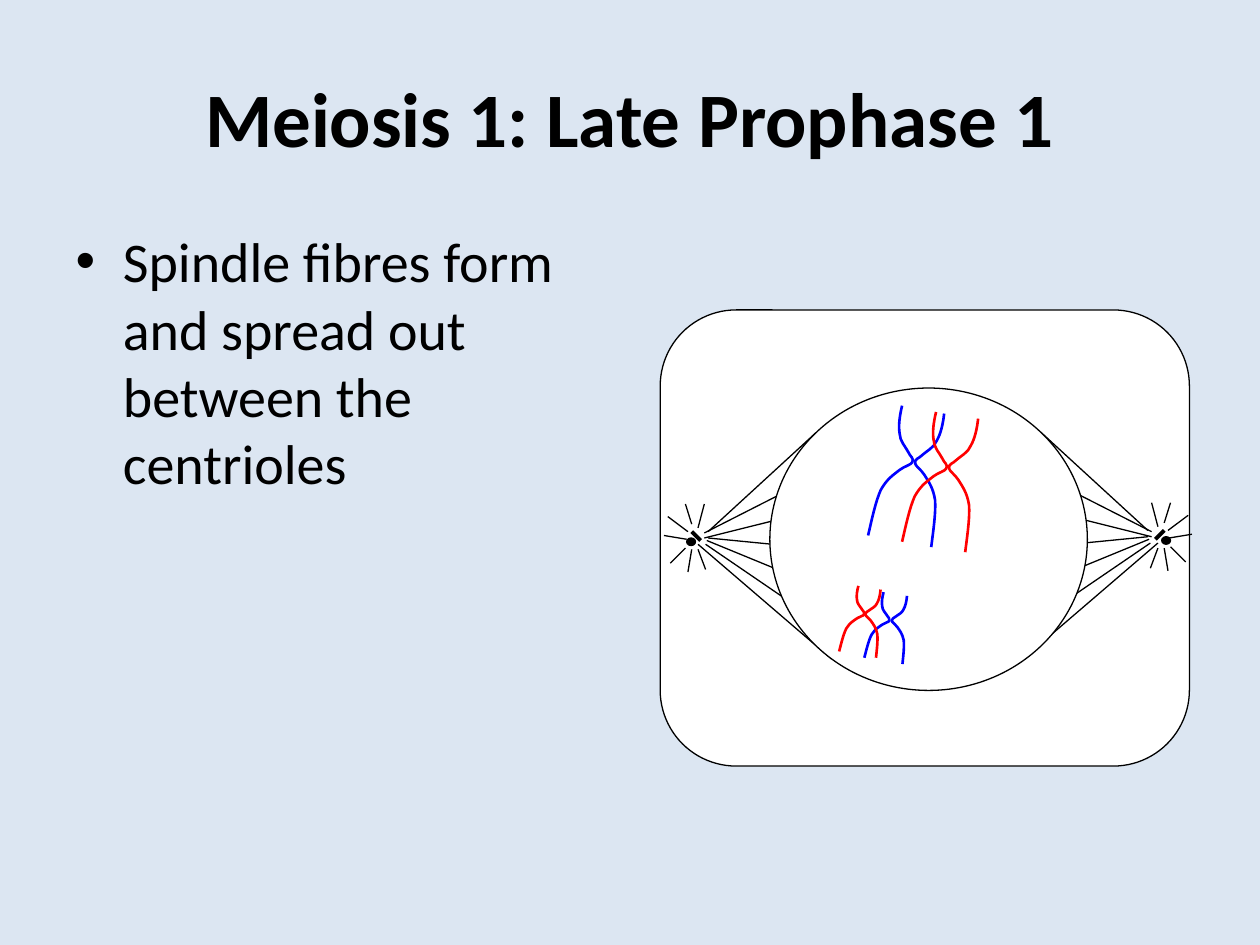
from typing import NamedTuple

from lxml.etree import SubElement
from pptx import Presentation
from pptx.dml.color import RGBColor
from pptx.enum.shapes import MSO_CONNECTOR as Connector, MSO_SHAPE as Preset
from pptx.enum.text import PP_ALIGN as Align
from pptx.oxml.ns import qn
from pptx.util import Inches, Pt

COLORS = {"background": "DCE6F2", "ink": "000000", "cell": "FFFFFF",
          "blue": "0000FF", "red": "FF0000"}
FONT = "Calibri"


class Ray(NamedTuple):
    x1: float
    y1: float
    x2: float
    y2: float
    weight: float = 0.75


class Chromosome(NamedTuple):
    """Two crossing chromatids of one size and colour."""
    left: float
    top: float
    right_left: float
    right_top: float
    width: float
    height: float
    color: str


# Spindle fibres, astral rays and the rod of the left centriole.
LEFT_POLE = [
    Ray(5.62, 4.22, 6.47, 3.44), Ray(5.59, 4.23, 6.18, 3.93),
    Ray(5.59, 4.27, 6.15, 4.13), Ray(5.62, 4.27, 6.13, 4.32),
    Ray(5.61, 4.29, 6.17, 4.52), Ray(5.6, 4.32, 6.23, 4.75),
    Ray(5.54, 4.32, 6.6, 5.23),
    Ray(5.49, 4.16, 5.44, 4), Ray(5.46, 4.22, 5.3, 4.1),
    Ray(5.45, 4.28, 5.27, 4.25), Ray(5.32, 4.47, 5.44, 4.35),
    Ray(5.49, 4.36, 5.46, 4.54), Ray(5.54, 4.19, 5.59, 4),
    Ray(5.54, 4.36, 5.6, 4.52),
    Ray(5.49, 4.22, 5.56, 4.29, 2.25),
]
POLE_SPAN = 14.73  # sum of the x values of two mirrored points
POLE_RISE = 0.01

CHROMOSOMES = [
    Chromosome(6.86, 4.7, 7.05, 4.73, 0.21, 0.52, "blue"),
    Chromosome(6.66, 4.65, 6.84, 4.68, 0.21, 0.52, "red"),
    Chromosome(6.89, 3.22, 7.21, 3.28, 0.37, 1.03, "blue"),
    Chromosome(7.16, 3.27, 7.48, 3.32, 0.37, 1.03, "red"),
]
# Start point, then two control points and an end point for each curve.
CHROMATID = [
    (0.27, 0),
    (0.25, 0.08), (0.24, 0.16), (0.25, 0.22),
    (0.25, 0.28), (0.3, 0.33), (0.32, 0.37),
    (0.33, 0.4), (0.37, 0.42), (0.35, 0.45),
    (0.34, 0.47), (0.29, 0.48), (0.25, 0.51),
    (0.2, 0.55), (0.15, 0.58), (0.1, 0.67),
    (0.06, 0.76), (0.03, 0.9), (0, 1.03),
]
CHROMATID_SIZE = (0.37, 1.03)
TILT = 20.2


def rgb(name: str) -> RGBColor:
    return RGBColor.from_string(COLORS[name])


def set_line(shape, color: str, weight: float) -> None:
    shape.line.color.rgb = rgb(color)
    shape.line.width = Pt(weight)


def add_preset(shapes, preset, left: float, top: float, width: float,
               height: float, fill: str) -> None:
    shape = shapes.add_shape(preset, Inches(left), Inches(top),
                             Inches(width), Inches(height))
    shape.shadow.inherit = False
    shape.fill.solid()
    shape.fill.fore_color.rgb = rgb(fill)
    set_line(shape, "ink", 0.75)


def add_ray(shapes, ray: Ray) -> None:
    line = shapes.add_connector(Connector.STRAIGHT, Inches(ray.x1), Inches(ray.y1),
                                Inches(ray.x2), Inches(ray.y2))
    set_line(line, "ink", ray.weight)
    SubElement(line._element.spPr, qn("a:effectLst"))


def mirrored(ray: Ray) -> Ray:
    return Ray(POLE_SPAN - ray.x1, ray.y1 - POLE_RISE,
               POLE_SPAN - ray.x2, ray.y2 - POLE_RISE, ray.weight)


def curve_segments(shape) -> None:
    """Join every three straight segments into one cubic curve."""
    path = next(shape._element.iter(qn("a:path")))
    segments = path.findall(qn("a:lnTo"))
    for start in range(0, len(segments), 3):
        curve = SubElement(path, qn("a:cubicBezTo"))
        for segment in segments[start:start + 3]:
            curve.append(segment[0])
            path.remove(segment)


def add_chromatid(shapes, left: float, top: float, chromosome: Chromosome,
                  is_right: bool) -> None:
    x_scale = chromosome.width / CHROMATID_SIZE[0]
    y_scale = chromosome.height / CHROMATID_SIZE[1]
    points = [(Inches(left + x * x_scale), Inches(top + y * y_scale))
              for x, y in CHROMATID]
    builder = shapes.build_freeform(*points[0])
    builder.add_line_segments(points[1:], close=False)
    strand = builder.convert_to_shape()
    curve_segments(strand)
    strand.shadow.inherit = False
    strand.fill.background()
    set_line(strand, chromosome.color, 1.5)
    if is_right:
        strand.rotation = TILT
        strand._element.spPr.find(qn("a:xfrm")).set("flipH", "1")


def write_placeholder(placeholder, text: str, size: int, bold: bool,
                      align: Align, box: tuple) -> None:
    placeholder.left, placeholder.top, placeholder.width, placeholder.height = (
        Inches(length) for length in box)
    placeholder.text_frame.text = text
    paragraph = placeholder.text_frame.paragraphs[0]
    paragraph.alignment = align
    paragraph.font.name = FONT
    paragraph.font.size = Pt(size)
    paragraph.font.bold = bold
    paragraph.font.color.rgb = rgb("ink")


def draw_cell(shapes) -> None:
    add_preset(shapes, Preset.ROUNDED_RECTANGLE, 5.24, 2.46, 4.2, 3.62, "cell")
    for ray in LEFT_POLE:
        add_ray(shapes, ray)
        add_ray(shapes, mirrored(ray))
    for left, top in ((5.45, 4.27), (9.22, 4.26)):
        add_preset(shapes, Preset.OVAL, left, top, 0.07, 0.06, "ink")
    add_preset(shapes, Preset.OVAL, 6.11, 3.08, 2.52, 2.4, "cell")
    for chromosome in CHROMOSOMES:
        add_chromatid(shapes, chromosome.left, chromosome.top, chromosome, False)
        add_chromatid(shapes, chromosome.right_left, chromosome.right_top,
                      chromosome, True)


def main() -> None:
    deck = Presentation()
    deck.slide_width, deck.slide_height = Inches(10), Inches(7.5)
    slide = deck.slides.add_slide(deck.slide_layouts[1])
    slide.background.fill.solid()
    slide.background.fill.fore_color.rgb = rgb("background")
    write_placeholder(slide.shapes.title, "Meiosis 1: Late Prophase 1",
                      44, True, Align.CENTER, (0.5, 0.3, 9, 1.25))
    write_placeholder(slide.placeholders[1],
                      "Spindle fibres form and spread out between the centrioles",
                      32, False, Align.LEFT, (0.5, 1.75, 4.49, 4.95))
    draw_cell(slide.shapes.add_group_shape().shapes)
    deck.save("out.pptx")


if __name__ == "__main__":
    main()
